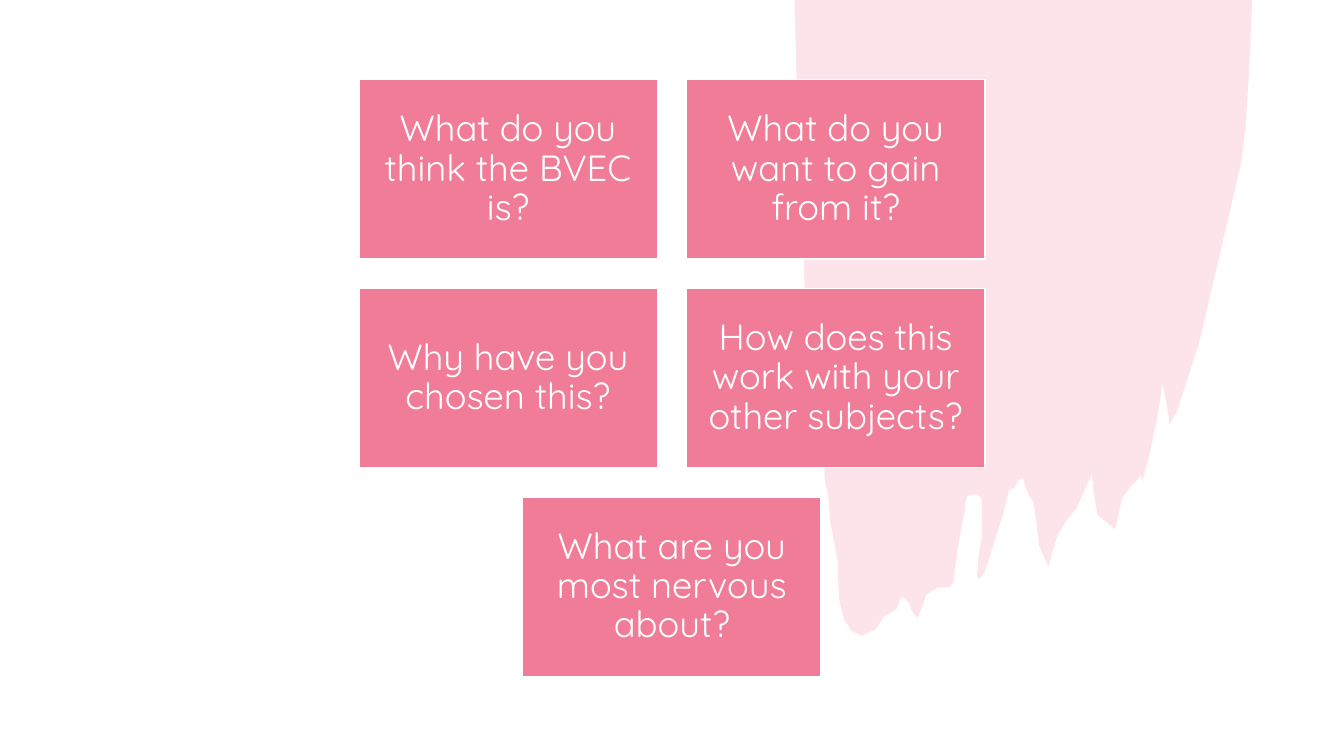
from dataclasses import dataclass

from pptx import Presentation
from pptx import util as u
from pptx.dml.color import RGBColor
from pptx.enum import shapes, text
from pptx.oxml import ns
from lxml import etree


@dataclass(frozen=True)
class Theme:
    pink: RGBColor = RGBColor(0xF0, 0x7C, 0x98)
    white: RGBColor = RGBColor(0xFF, 0xFF, 0xFF)
    font: str = "Quicksand"
    size: int = 26
    alpha: int = 20  # percent opacity of the brush stroke


THEME = Theme()

# Card grid, in inches
CARD_W, CARD_H = 2.96, 1.78
STEP_X, STEP_Y = 3.25, 2.07
LEFT, TOP = 3.56, 0.79
COLS = 2
ROWS = [
    ["What do you think the BVEC is?", "What do you want to gain from it?"],
    ["Why have you chosen this?", "How does this work with your other subjects?"],
    ["What are you most nervous about?"],
]

# Brush stroke: start point, then Bezier curves (two controls and an end)
START = (7.88, 0)
CURVES = [
    (7.9, 1.3, 7.97, 2.58, 7.97, 2.58),
    (7.97, 2.58, 8.02, 3.84, 8.06, 4.09),
    (8.09, 4.35, 8.13, 4.19, 8.17, 4.44),
    (8.18, 4.61, 8.16, 4.78, 8.22, 4.94),
    (8.21, 5.18, 8.28, 5.34, 8.31, 5.58),
    (8.32, 5.77, 8.3, 5.96, 8.37, 6.14),
    (8.44, 6.28, 8.52, 6.38, 8.69, 6.24),
    (8.69, 6.07, 8.98, 6.09, 8.94, 5.92),
    (9.07, 5.95, 9, 6.08, 9.1, 6.13),
    (9.18, 6.04, 9.12, 5.86, 9.3, 5.83),
    (9.48, 5.87, 9.46, 5.76, 9.47, 5.66),
    (9.5, 5.43, 9.52, 5.29, 9.57, 5.07),
    (9.58, 5.01, 9.55, 4.88, 9.67, 4.9),
    (9.77, 4.91, 9.73, 5.01, 9.74, 5.07),
    (9.77, 5.41, 9.69, 5.39, 9.69, 5.73),
    (9.69, 5.75, 9.75, 5.76, 9.79, 5.61),
    (9.87, 5.33, 9.96, 5.1, 10.01, 4.86),
    (10.06, 4.91, 10.11, 4.69, 10.15, 4.74),
    (10.16, 4.82, 10.19, 4.9, 10.25, 4.98),
    (10.31, 5.21, 10.25, 5.42, 10.4, 5.62),
    (10.4, 5.62, 10.41, 5.56, 10.49, 5.31),
    (10.56, 5.11, 10.65, 5.21, 10.83, 4.7),
    (10.89, 4.9, 10.77, 5.15, 11.06, 5.25),
    (11.12, 5.1, 11.08, 4.92, 11.22, 4.82),
    (11.26, 4.79, 11.29, 4.75, 11.31, 4.71),
    (11.32, 4.73, 11.32, 4.75, 11.33, 4.77),
    (11.36, 4.74, 11.52, 3.99, 11.53, 3.81),
    (11.57, 3.94, 11.6, 4.21, 11.6, 4.21),
    (11.6, 4.21, 11.78, 4.15, 12.31, 1.62),
    (12.36, 1.42, 12.39, 0.74, 12.42, 0),
]


def trace(start, curves, steps=3):
    """Turn the Bezier curves into a list of points in EMU."""
    points, (x, y) = [], start
    for ax, ay, bx, by, ex, ey in curves:
        for i in range(1, steps + 1):
            t = i / steps
            s = 1 - t
            w = (s**3, 3 * s * s * t, 3 * s * t * t, t**3)
            px = sum(k * v for k, v in zip(w, (x, ax, bx, ex)))
            py = sum(k * v for k, v in zip(w, (y, ay, by, ey)))
            points.append((u.Inches(px), u.Inches(py)))
        x, y = ex, ey
    return points


def add_brush(slide):
    form = slide.shapes.build_freeform(*map(u.Inches, START))
    form.add_line_segments(trace(START, CURVES), close=True)
    brush = form.convert_to_shape()
    brush.shadow.inherit = False
    brush.line.fill.background()
    brush.fill.solid()
    brush.fill.fore_color.rgb = THEME.pink
    color = brush.fill._xPr.find(".//" + ns.qn("a:srgbClr"))
    etree.SubElement(color, ns.qn("a:alpha"), val=str(THEME.alpha * 1000))


def add_card(slide, left, top, words):
    card = slide.shapes.add_shape(
        shapes.MSO_SHAPE.RECTANGLE,
        u.Inches(left), u.Inches(top), u.Inches(CARD_W), u.Inches(CARD_H))
    card.shadow.inherit = False
    card.fill.solid()
    card.fill.fore_color.rgb = THEME.pink
    card.line.color.rgb = THEME.white
    card.line.width = u.Pt(1)

    frame = card.text_frame
    frame.word_wrap = True
    frame.vertical_anchor = text.MSO_ANCHOR.MIDDLE
    frame.margin_left = frame.margin_right = u.Inches(0.11)
    frame.margin_top = frame.margin_bottom = u.Inches(0.11)
    frame.text = words
    para = frame.paragraphs[0]
    para.alignment = text.PP_ALIGN.CENTER
    para.line_spacing = 0.9
    font = para.runs[0].font
    font.name = THEME.font
    font.size = u.Pt(THEME.size)
    font.color.rgb = THEME.white


def add_cards(slide):
    for r, row in enumerate(ROWS):
        # A short row is centred under the full ones
        left = LEFT + (COLS - len(row)) * STEP_X / 2
        for c, words in enumerate(row):
            add_card(slide, left + c * STEP_X, TOP + r * STEP_Y, words)


def main():
    deck = Presentation()
    deck.slide_width = u.Inches(13.33)
    deck.slide_height = u.Inches(7.5)
    slide = deck.slides.add_slide(deck.slide_layouts[6])

    # Backdrop, then the questions
    add_brush(slide)
    add_cards(slide)
    deck.save("out.pptx")


if __name__ == "__main__":
    main()
